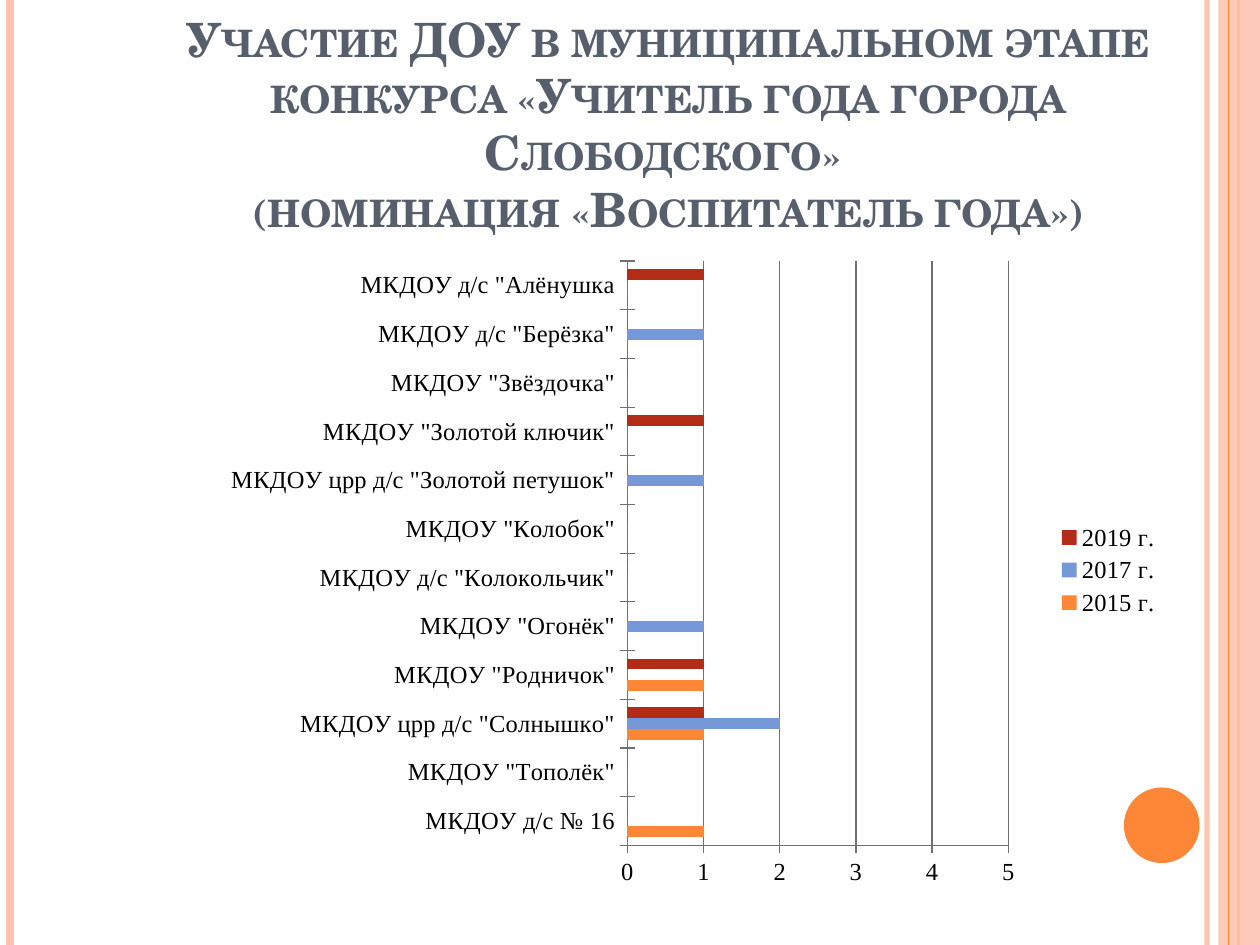
from lxml import etree
from pptx import Presentation
from pptx.chart.data import CategoryChartData as Data
from pptx.dml.color import RGBColor
from pptx.enum.chart import XL_CHART_TYPE as Kind, XL_LEGEND_POSITION as Side, XL_TICK_MARK as Tick
from pptx.enum.shapes import MSO_CONNECTOR as Conn, MSO_SHAPE as Geom
from pptx.enum.text import MSO_ANCHOR as Anchor, PP_ALIGN as Align
from pptx.oxml import parse_xml
from pptx.oxml.ns import nsdecls, qn
from pptx.util import Inches, Pt

ORANGE, PEACH, GREY = "FE8637", "FEC3AE", "707070"
NAMES = [
    "МКДОУ д/с № 16", 'МКДОУ "Тополёк"', 'МКДОУ црр д/с "Солнышко"',
    'МКДОУ "Родничок"', 'МКДОУ "Огонёк"', 'МКДОУ д/с "Колокольчик"',
    'МКДОУ "Колобок"', 'МКДОУ црр д/с "Золотой петушок"',
    'МКДОУ "Золотой ключик"', 'МКДОУ "Звёздочка"',
    'МКДОУ д/с "Берёзка"', 'МКДОУ д/с "Алёнушка',
]
YEARS = [
    ("2015 г.", ORANGE, [1, 0, 1, 1, 0, 0, 0, 0, 0, 0, 0, 0]),
    ("2017 г.", "7598D9", [0, 0, 2, 0, 1, 0, 0, 1, 0, 0, 1, 0]),
    ("2019 г.", "B32C16", [0, 0, 1, 1, 0, 0, 0, 0, 1, 0, 0, 1]),
]
TITLE = ("Участие ДОУ в муниципальном этапе конкурса «Учитель года города "
         "Слободского» \v(номинация «Воспитатель года»)")


def rgb(code):
    return RGBColor.from_string(code)


def style(obj, vals):
    for key, val in vals.items():
        setattr(obj, key, val)


def paint(fill, code):
    fill.solid()
    fill.fore_color.rgb = rgb(code)


def fade(shape, pct):
    tone = next(shape._element.spPr.iter(qn("a:srgbClr")))
    etree.SubElement(tone, qn("a:alpha"), val=str(pct * 1000))


def stripe(slide, x, code, width):
    line = slide.shapes.add_connector(
        Conn.STRAIGHT, Inches(x), Inches(0), Inches(x), Inches(7.5))
    line.line.color.rgb = rgb(code)
    line.line.width = Pt(width)
    etree.SubElement(line._element.spPr, qn("a:effectLst"))
    return line


def block(slide, geom, box, code):
    shape = slide.shapes.add_shape(geom, *map(Inches, box))
    shape.shadow.inherit = False
    paint(shape.fill, code)
    shape.line.fill.background()
    return shape


def add_frame(slide):
    fade(stripe(slide, 9.58, PEACH, 3), 93)
    stripe(slide, 0.08, PEACH, 4.5)
    stripe(slide, 9.83, ORANGE, 1.5)
    fade(block(slide, Geom.RECTANGLE, (9.67, 0, 0.33, 7.5), PEACH), 87)
    stripe(slide, 9.75, ORANGE, 0.75)
    block(slide, Geom.OVAL, (8.92, 6.25, 0.6, 0.6), ORANGE)


def add_title(slide, box):
    frame = slide.shapes.add_textbox(*map(Inches, box)).text_frame
    style(frame, {"word_wrap": True, "vertical_anchor": Anchor.BOTTOM, "text": TITLE})
    para = frame.paragraphs[0]
    para.alignment = Align.CENTER
    for run in para.runs:
        style(run.font, {"name": "TeX Gyre Schola", "size": Pt(27), "bold": True})
        run.font.color.rgb = rgb("575F6D")
        run._r.get_or_add_rPr().set("cap", "small")


def place_plot(chart, x, y, w, h):
    area = chart._chartSpace.chart.plotArea
    for old in area.findall(qn("c:layout")):
        area.remove(old)
    area.insert(0, parse_xml(
        f'<c:layout {nsdecls("c")}><c:manualLayout><c:layoutTarget val="inner"/>'
        '<c:xMode val="edge"/><c:yMode val="edge"/>'
        f'<c:x val="{x}"/><c:y val="{y}"/><c:w val="{w}"/><c:h val="{h}"/>'
        '</c:manualLayout></c:layout>'))


def add_bars(slide, box):
    data = Data(number_format="General")
    data.categories = NAMES
    for name, _, vals in YEARS:
        data.add_series(name, vals)
    chart = slide.shapes.add_chart(Kind.BAR_CLUSTERED, *map(Inches, box), data).chart
    style(chart, {"has_title": False, "has_legend": True})
    style(chart.font, {"name": "Times New Roman", "size": Pt(14)})
    chart.font.color.rgb = rgb("000000")
    style(chart.legend, {"position": Side.RIGHT, "include_in_layout": False})
    style(chart.plots[0], {"gap_width": 150, "overlap": 0, "vary_by_categories": False})
    for row, (_, code, _) in zip(chart.plots[0].series, YEARS):
        paint(row.format.fill, code)
    cats, vals = chart.category_axis, chart.value_axis
    style(cats, {"has_major_gridlines": False})
    style(vals, {"has_major_gridlines": True, "minimum_scale": 0,
                 "maximum_scale": 5, "major_unit": 1})
    for axis in (cats, vals):
        style(axis, {"major_tick_mark": Tick.CROSS, "minor_tick_mark": Tick.NONE})
    for part in (cats, vals, vals.major_gridlines):
        part.format.line.color.rgb = rgb(GREY)
        part.format.line.width = Pt(0.75)
    place_plot(chart, 0.47, 0.04, 0.37, 0.87)


def main():
    deck = Presentation()
    style(deck, {"slide_width": Inches(10), "slide_height": Inches(7.5)})
    slide = deck.slides.add_slide(deck.slide_layouts[6])
    add_frame(slide)
    add_title(slide, (1.22, 0.68, 8.17, 1.25))
    add_bars(slide, (1.14, 1.86, 8.17, 5.33))
    deck.save("out.pptx")


if __name__ == "__main__":
    main()
